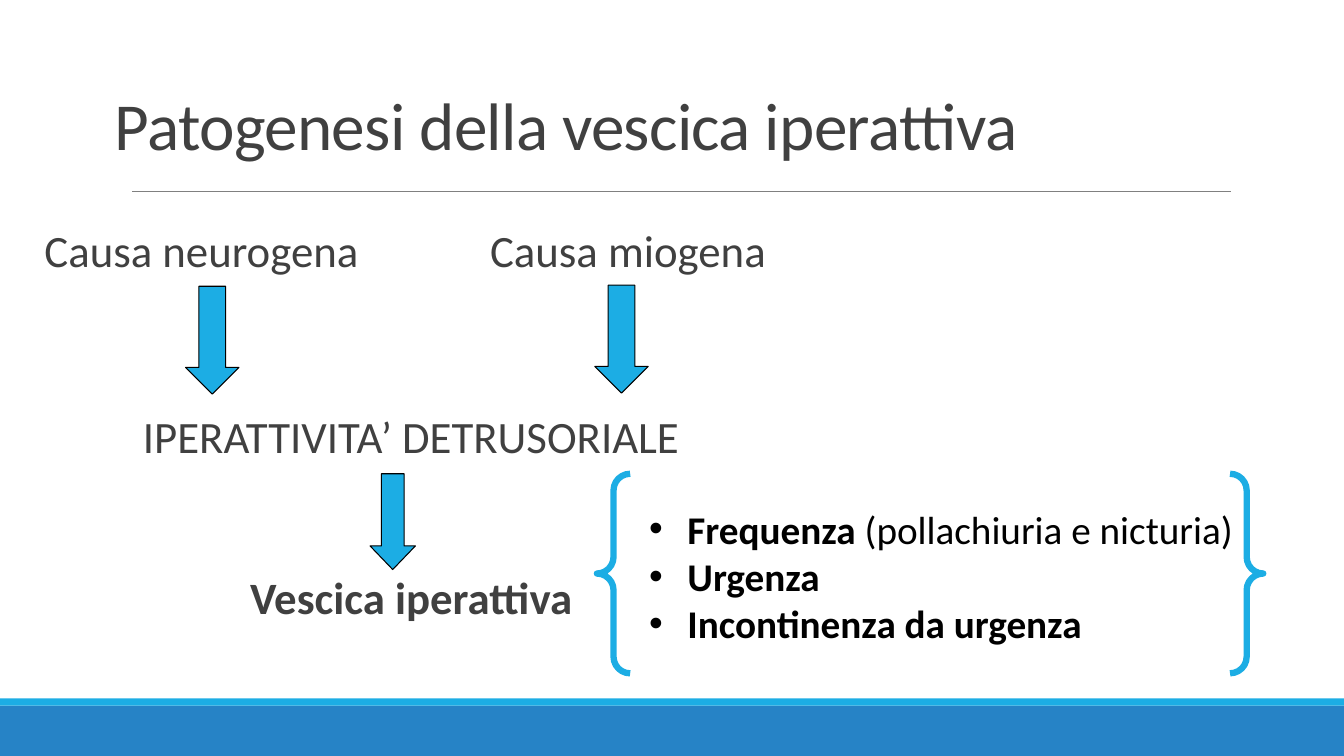
from dataclasses import dataclass

from lxml import etree
from pptx import Presentation
from pptx.dml.color import RGBColor
from pptx.enum import shapes, text
from pptx.oxml import ns
from pptx.util import Inches, Pt


@dataclass(frozen=True)
class Theme:
    """Colours, type sizes and font of the slide."""
    accent: str = "1CADE4"
    band: str = "2683C6"
    ink: str = "404040"
    black: str = "000000"
    rule: str = "808080"
    font: str = "Calibri"
    title: int = 48
    label: int = 32
    symptom: int = 28


THEME = Theme()
SHAPE = shapes.MSO_SHAPE
LABELS = [
    ("Causa neurogena", 2.0, 2.21, False),
    ("Causa miogena", 6.23, 2.21, False),
    ("IPERATTIVITA’ DETRUSORIALE", 4.08, 4.06, False),
    ("Vescica iperattiva", 4.08, 5.65, True),
]
ARROWS = [
    ((1.84, 2.84, 0.53, 1.07), 0.5),
    ((5.9, 2.83, 0.53, 1.07), 0.5),
    ((3.67, 4.7, 0.45, 0.95), 0.52),
]
SYMPTOMS = [
    [("Frequenza ", True), ("(pollachiuria e nicturia)", False)],
    [("Urgenza", True)],
    [("Incontinenza da urgenza", True)],
]


def rgb(value):
    """Turn a hex string into a colour."""
    return RGBColor.from_string(value)


def apply(target, formats):
    """Set each attribute in formats on the target."""
    for name, value in formats.items():
        setattr(target, name, value)


def place(sp, box):
    """Move and size a shape in inches."""
    names = ("left", "top", "width", "height")
    apply(sp, {name: Inches(value) for name, value in zip(names, box)})


def add_run(p, words, size, color, bold=False):
    """Add a formatted run to a paragraph."""
    r = p.add_run()
    r.text = words
    apply(r.font, {"name": THEME.font, "size": Pt(size), "bold": bold})
    r.font.color.rgb = rgb(color)
    return r


def add_figure(s, kind, box, fill=None, line=None, width=0.75):
    """Add a preset shape with optional fill and outline."""
    sp = s.shapes.add_shape(kind, *map(Inches, box))
    sp.shadow.inherit = False
    if fill:
        sp.fill.solid()
        sp.fill.fore_color.rgb = rgb(fill)
    else:
        sp.fill.background()
    if line:
        sp.line.color.rgb = rgb(line)
        sp.line.width = Pt(width)
    else:
        sp.line.fill.background()
    return sp


def add_rule(s, left, right, y):
    """Add the thin line below the title."""
    ends = map(Inches, (left, y, right, y))
    line = s.shapes.add_connector(shapes.MSO_CONNECTOR.STRAIGHT, *ends)
    line.line.color.rgb = rgb(THEME.rule)
    line.line.width = Pt(0.5)
    etree.SubElement(line._element.spPr, ns.qn("a:effectLst"))


def set_title(s, words):
    """Place and format the title placeholder."""
    sp = s.shapes.title
    place(sp, (1.04, 0.43, 10.77, 1.25))
    tf = sp.text_frame
    apply(tf, {"vertical_anchor": text.MSO_ANCHOR.BOTTOM, "word_wrap": True,
               "auto_size": text.MSO_AUTO_SIZE.NONE})
    p = tf.paragraphs[0]
    apply(p, {"alignment": text.PP_ALIGN.LEFT, "line_spacing": 0.85})
    r = add_run(p, words, THEME.title, THEME.ink)
    r.font._element.set("spc", "-50")


def add_label(s, words, center, top, bold):
    """Add a one-line label centred on a given x."""
    width = 6
    box = (center - width / 2, top, width, 0.54)
    tf = s.shapes.add_textbox(*map(Inches, box)).text_frame
    apply(tf, {"word_wrap": True, "margin_top": 0, "margin_bottom": 0})
    p = tf.paragraphs[0]
    p.alignment = text.PP_ALIGN.CENTER
    add_run(p, words, THEME.label, THEME.ink, bold)


def add_bullets(s, box, items):
    """Add a bulleted list of paragraphs made of runs."""
    tf = s.shapes.add_textbox(*map(Inches, box)).text_frame
    tf.word_wrap = True
    for i, runs in enumerate(items):
        p = tf.add_paragraph() if i else tf.paragraphs[0]
        pPr = p._p.get_or_add_pPr()
        indent = Inches(0.38)
        pPr.set("marL", str(indent))
        pPr.set("indent", str(-indent))
        etree.SubElement(pPr, ns.qn("a:buFont"), typeface="Arial")
        etree.SubElement(pPr, ns.qn("a:buChar"), char="•")
        for words, bold in runs:
            add_run(p, words, THEME.symptom, THEME.black, bold)


def main():
    """Build the slide and save it."""
    prs = Presentation()
    apply(prs, {"slide_width": Inches(13.33), "slide_height": Inches(7.5)})
    s = prs.slides.add_slide(prs.slide_layouts[5])
    add_figure(s, SHAPE.RECTANGLE, (0, 7, 13.33, 0.5), THEME.band)
    add_figure(s, SHAPE.RECTANGLE, (0, 6.93, 13.33, 0.07), THEME.accent)
    add_rule(s, 1.31, 12.21, 1.9)
    set_title(s, "Patogenesi della vescica iperattiva")
    for label in LABELS:
        add_label(s, *label)
    for box, head in ARROWS:
        sp = add_figure(s, SHAPE.DOWN_ARROW, box, THEME.accent, THEME.black)
        sp.adjustments[1] = head
    add_figure(s, SHAPE.DOUBLE_BRACE, (5.92, 4.7, 6.61, 1.98),
               line=THEME.accent, width=4.5)
    add_bullets(s, (6.34, 4.96, 6.12, 1.51), SYMPTOMS)
    prs.save("out.pptx")


if __name__ == "__main__":
    main()
